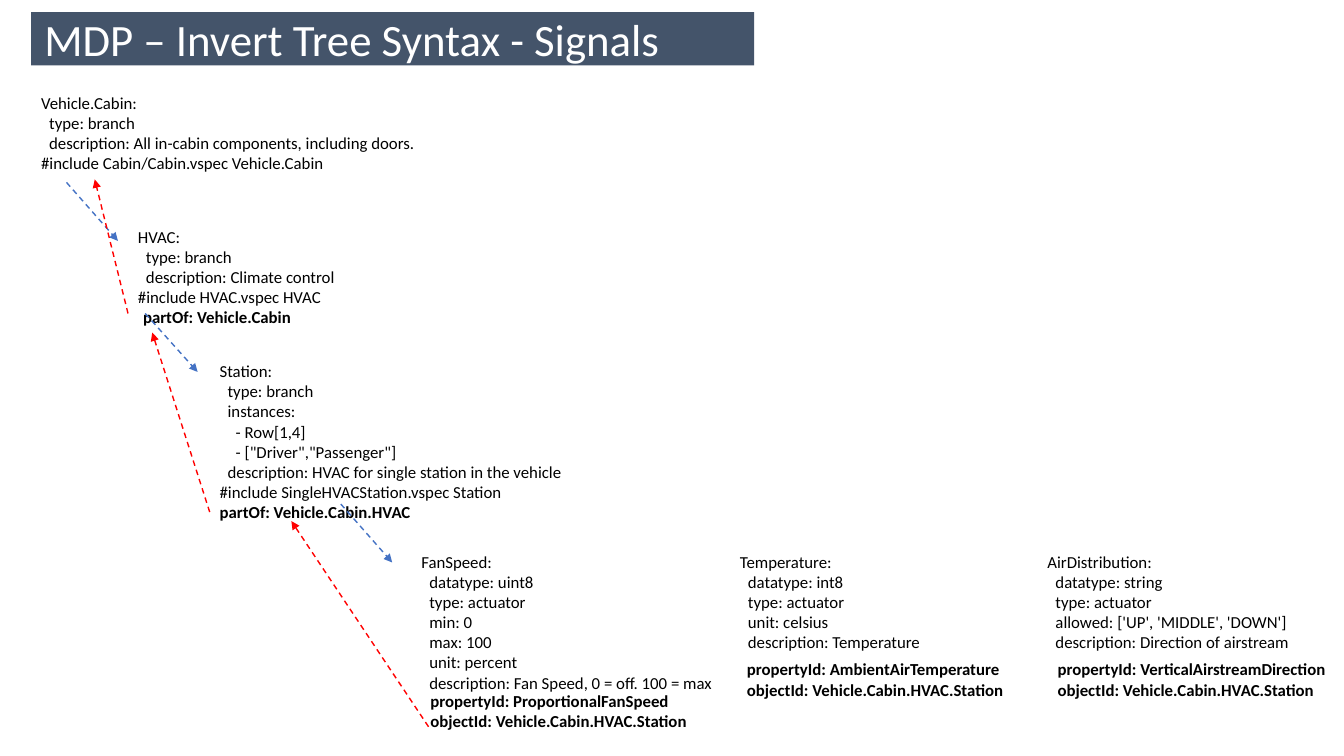
from lxml import etree
from pptx import Presentation
from pptx.dml.color import RGBColor
from pptx.enum.dml import MSO_LINE
from pptx.enum.shapes import MSO_CONNECTOR
from pptx.enum.text import MSO_ANCHOR, MSO_AUTO_SIZE, PP_ALIGN
from pptx.oxml import parse_xml
from pptx.oxml.ns import nsdecls, qn
from pptx.util import Inches, Pt

COLORS = {"banner": "44546A", "title": "FFFFFF", "text": "000000",
          "include": "4472C4", "part_of": "FF0000"}
FONT = "Calibri"
TITLE = "MDP – Invert Tree Syntax - Signals"
TITLE_BOX = (0.31, 0.12, 7.17, 0.53)

NODES = [
    (0.31, 0.87, 3.94, """Vehicle.Cabin:
  type: branch
  description: All in-cabin components, including doors.
#include Cabin/Cabin.vspec Vehicle.Cabin"""),
    (1.27, 2.2, 2.17, """HVAC:
  type: branch
  description: Climate control
#include HVAC.vspec HVAC"""),
    (2.08, 3.53, 3.63, """Station:
  type: branch
  instances:
    - Row[1,4]
    - ["Driver","Passenger"]
  description: HVAC for single station in the vehicle
#include SingleHVACStation.vspec Station"""),
    (4.08, 5.42, 3.12, """FanSpeed:
  datatype: uint8
  type: actuator
  min: 0
  max: 100
  unit: percent
  description: Fan Speed, 0 = off. 100 = max"""),
    (7.24, 5.42, 2.0, """Temperature:
  datatype: int8
  type: actuator
  unit: celsius
  description: Temperature"""),
    (10.29, 5.42, 2.62, """AirDistribution:
  datatype: string
  type: actuator
  allowed: ['UP', 'MIDDLE', 'DOWN']
  description: Direction of airstream"""),
]

OBJECT_ID = "objectId: Vehicle.Cabin.HVAC.Station"
REFERENCES = [
    (1.32, 2.99, 1.69, "partOf: Vehicle.Cabin"),
    (2.08, 4.93, 2.12, "partOf: Vehicle.Cabin.HVAC"),
    (4.17, 6.8, 2.78, f"propertyId: ProportionalFanSpeed\n{OBJECT_ID}"),
    (7.31, 6.49, 2.78, f"propertyId: AmbientAirTemperature\n{OBJECT_ID}"),
    (10.39, 6.49, 2.89, f"propertyId: VerticalAirstreamDirection\n{OBJECT_ID}"),
]

ARROWS = {
    "include": [(0.66, 1.81, 1.17, 2.39), (1.44, 3.11, 1.96, 3.69),
                (3.38, 5.0, 3.89, 5.58)],
    "part_of": [(1.27, 3.11, 0.94, 1.78), (2.08, 5.08, 1.51, 3.3),
                (4.25, 7.21, 2.89, 5.17)],
}

LINE_HEIGHT = 0.2
PADDING = 0.1
INDENT = 0.08


def rgb(name):
    return RGBColor.from_string(COLORS[name])


def apply(target, values):
    for name, value in values.items():
        setattr(target, name, value)


def add_run(p, text, size, color, bold=False):
    r = p.add_run()
    r.text = text
    apply(r.font, {"name": FONT, "size": Pt(size), "bold": bold})
    r.font.color.rgb = rgb(color)


def add_title(slide):
    sp = slide.shapes.title
    apply(sp, dict(zip(("left", "top", "width", "height"), map(Inches, TITLE_BOX))))
    sp._element.spPr.find(qn("a:xfrm")).addnext(parse_xml(
        f'<a:prstGeom {nsdecls("a")} prst="roundRect"><a:avLst>'
        '<a:gd name="adj" fmla="val 7400"/></a:avLst></a:prstGeom>'))
    sp.fill.solid()
    sp.fill.fore_color.rgb = rgb("banner")
    tf = sp.text_frame
    margins = {f"margin_{side}": Inches(0.13)
               for side in ("left", "top", "right", "bottom")}
    apply(tf, {"vertical_anchor": MSO_ANCHOR.MIDDLE, "word_wrap": True,
               "auto_size": MSO_AUTO_SIZE.NONE, **margins})
    p = tf.paragraphs[0]
    p.alignment = PP_ALIGN.LEFT
    add_run(p, TITLE, 32, "title")


def add_block(slide, left, top, width, text, bold):
    lines = text.splitlines()
    height = PADDING + LINE_HEIGHT * len(lines)
    sp = slide.shapes.add_textbox(*map(Inches, (left, top, width, height)))
    tf = sp.text_frame
    apply(tf, {"word_wrap": False, "auto_size": MSO_AUTO_SIZE.SHAPE_TO_FIT_TEXT})
    for i, line in enumerate(lines):
        p = tf.add_paragraph() if i else tf.paragraphs[0]
        entry = line.lstrip()
        level = (len(line) - len(entry)) // 2
        if level:
            p._p.get_or_add_pPr().set("marL", str(Inches(INDENT * level)))
        add_run(p, entry, 12, "text", bold)


def add_arrow(slide, ends, color):
    cx = slide.shapes.add_connector(MSO_CONNECTOR.STRAIGHT, *map(Inches, ends))
    apply(cx.line, {"width": Pt(1), "dash_style": MSO_LINE.DASH})
    cx.line.color.rgb = rgb(color)
    etree.SubElement(cx.line._get_or_add_ln(), qn("a:tailEnd"), type="triangle")
    etree.SubElement(cx._element.spPr, qn("a:effectLst"))


def main():
    prs = Presentation()
    apply(prs, {"slide_width": Inches(13.33), "slide_height": Inches(7.5)})
    slide = prs.slides.add_slide(prs.slide_layouts[5])
    add_title(slide)
    for blocks, bold in ((NODES, False), (REFERENCES, True)):
        for block in blocks:
            add_block(slide, *block, bold)
    for color, arrows in ARROWS.items():
        for ends in arrows:
            add_arrow(slide, ends, color)
    prs.save("out.pptx")


if __name__ == "__main__":
    main()
